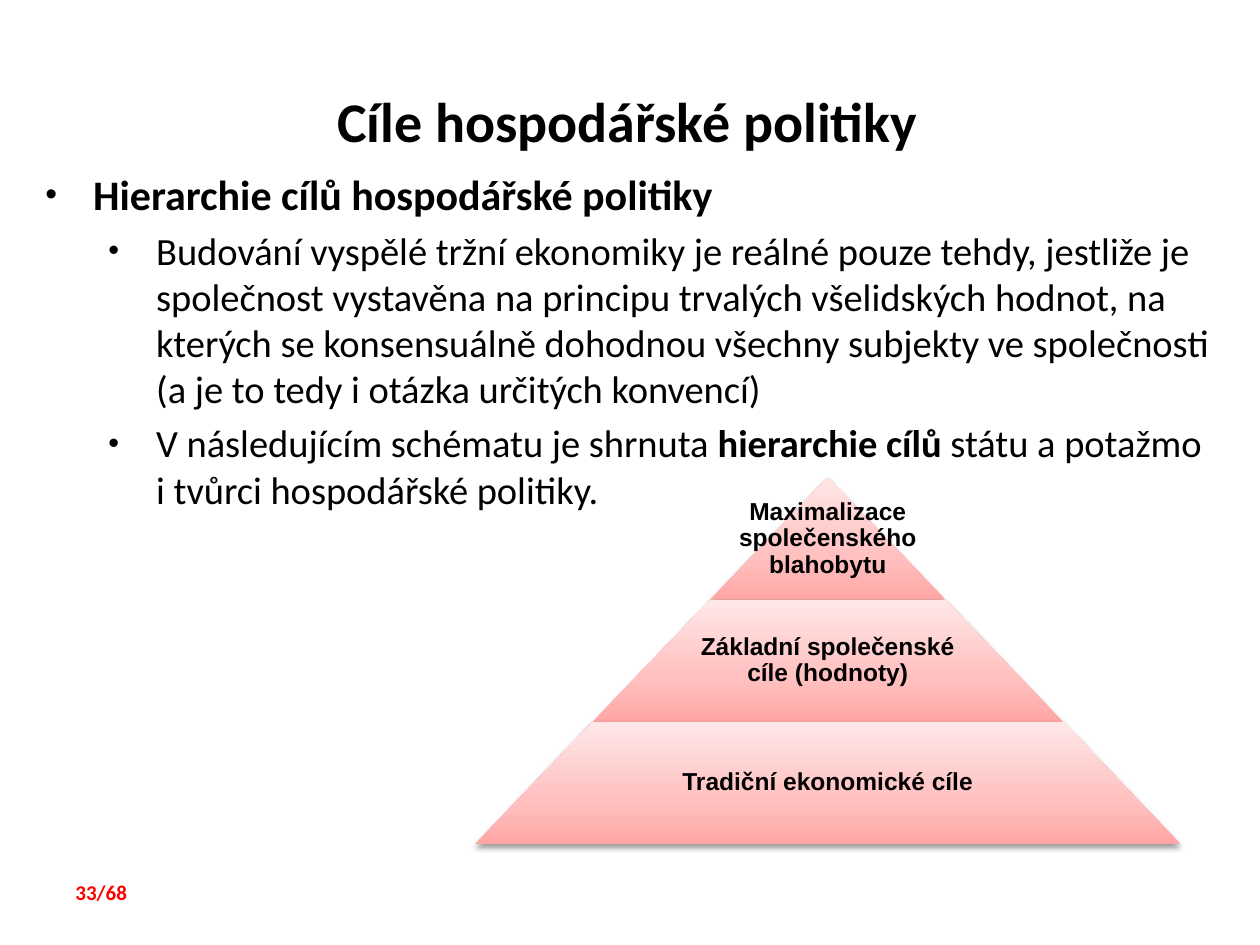
from lxml import etree
from pptx import Presentation
from pptx.dml.color import RGBColor
from pptx.enum import shapes, text
from pptx.oxml import ns, parse_xml
from pptx.util import Inches, Pt

TITLE = "Cíle hospodářské politiky"
PAGE_NUMBER = "33/68"
# (level, size, [(text, bold), ...])
BULLETS = [
    (0, 24, [("Hierarchie cílů hospodářské politiky", True)]),
    (1, 22, [("Budování vyspělé tržní ekonomiky je reálné pouze tehdy, jestliže je "
              "společnost vystavěna na principu trvalých všelidských hodnot, na kterých "
              "se konsensuálně dohodnou všechny subjekty ve společnosti (a je to tedy "
              "i otázka určitých konvencí)", False)]),
    (1, 22, [("V následujícím schématu je shrnuta ", False),
             ("hierarchie cílů ", True),
             ("státu a potažmo i tvůrci hospodářské politiky.", False)]),
]
# (label, share of the tier width that holds the label), top to bottom
TIERS = [
    ("Maximalizace společenského blahobytu", 1),
    ("Základní společenské cíle (hodnoty)", 0.65),
    ("Tradiční ekonomické cíle", 0.65),
]
GRADIENT = [(0, "FFA6A5"), (35, "FFC0BF"), (100, "FFE7E7")]
PYRAMID_CENTER, PYRAMID_TOP = 6.57, 3.79
PYRAMID_WIDTH, TIER_HEIGHT = 5.6, 0.97


def style(span, size, color="000000", bold=True, font="Calibri"):
    span.font.name = font
    span.font.size = Pt(size)
    span.font.bold = bold
    span.font.color.rgb = RGBColor.from_string(color)


def place(shape, left, top, width, height):
    shape.left, shape.top = Inches(left), Inches(top)
    shape.width, shape.height = Inches(width), Inches(height)


def add_bullet(para, level):
    props = para._p.get_or_add_pPr()
    props.set("marL", str(Inches(0.38 + 0.5 * level)))
    props.set("indent", str(Inches(-0.38)))
    for tag, name, value in (("buSzPct", "val", "80000"),
                             ("buFont", "typeface", "Arial"),
                             ("buChar", "char", "•")):
        etree.SubElement(props, ns.qn("a:" + tag)).set(name, value)


def paint_tier(shape):
    """Give a tier its three-stop gradient and soft shadow below."""
    shape.line.fill.background()
    stops = "".join(f'<a:gs pos="{pos * 1000}"><a:srgbClr val="{color}"/></a:gs>'
                    for pos, color in GRADIENT)
    fill = parse_xml(f'<a:gradFill {ns.nsdecls("a")} rotWithShape="1"><a:gsLst>{stops}'
                     '</a:gsLst><a:lin ang="16200000" scaled="0"/></a:gradFill>')
    shadow = parse_xml(f'<a:effectLst {ns.nsdecls("a")}><a:outerShdw blurRad="{Pt(3.1)}" '
                       f'dist="{Pt(1.6)}" dir="5400000" rotWithShape="0"><a:srgbClr val="000000">'
                       '<a:alpha val="38000"/></a:srgbClr></a:outerShdw></a:effectLst>')
    props = shape._element.spPr
    props.find(ns.qn("a:prstGeom")).addnext(fill)
    props.append(shadow)


def add_tier(page, index, label, label_share):
    width = PYRAMID_WIDTH * (index + 1) / len(TIERS)
    top = PYRAMID_TOP + index * TIER_HEIGHT
    tier = page.shapes.add_shape(
        shapes.MSO_SHAPE.TRAPEZOID, Inches(PYRAMID_CENTER - width / 2), Inches(top),
        Inches(width), Inches(TIER_HEIGHT))
    tier.adjustments[0] = PYRAMID_WIDTH / 2 / len(TIERS) / TIER_HEIGHT
    paint_tier(tier)

    label_width = width * label_share
    box = page.shapes.add_textbox(
        Inches(PYRAMID_CENTER - label_width / 2), Inches(top),
        Inches(label_width), Inches(TIER_HEIGHT))
    frame = box.text_frame
    frame.word_wrap = True
    frame.vertical_anchor = text.MSO_ANCHOR.MIDDLE
    frame.margin_left = frame.margin_right = Inches(0.02)
    frame.margin_top = frame.margin_bottom = Inches(0.02)
    frame.text = label
    para = frame.paragraphs[0]
    para.alignment = text.PP_ALIGN.CENTER
    para.line_spacing = 0.9
    style(para.runs[0], 14, font="Arial")


def main():
    deck = Presentation()
    deck.slide_width, deck.slide_height = Inches(10), Inches(7.5)
    page = deck.slides.add_slide(deck.slide_layouts[1])

    title = page.shapes.title
    place(title, 0.48, 0.33, 9, 1.25)
    title.text_frame.text = TITLE
    title.text_frame.auto_size = text.MSO_AUTO_SIZE.NONE
    style(title.text_frame.paragraphs[0].runs[0], 32)

    body = page.placeholders[1]
    place(body, 0.26, 1.29, 9.45, 5.65)
    frame = body.text_frame
    frame.auto_size = text.MSO_AUTO_SIZE.NONE
    for index, (level, size, spans) in enumerate(BULLETS):
        para = frame.add_paragraph() if index else frame.paragraphs[0]
        para.level = level
        para.space_before = Pt(size * 0.2 if index else 0)
        add_bullet(para, level)
        for words, bold in spans:
            span = para.add_run()
            span.text = words
            style(span, size, bold=bold)

    number = page.shapes.add_textbox(Inches(0.5), Inches(6.93), Inches(0.92), Inches(0.3))
    number.text_frame.word_wrap = True
    number.text_frame.text = PAGE_NUMBER
    style(number.text_frame.paragraphs[0].runs[0], 12, "FF0000")

    for index, (label, label_share) in enumerate(TIERS):
        add_tier(page, index, label, label_share)

    deck.save("out.pptx")


if __name__ == "__main__":
    main()
